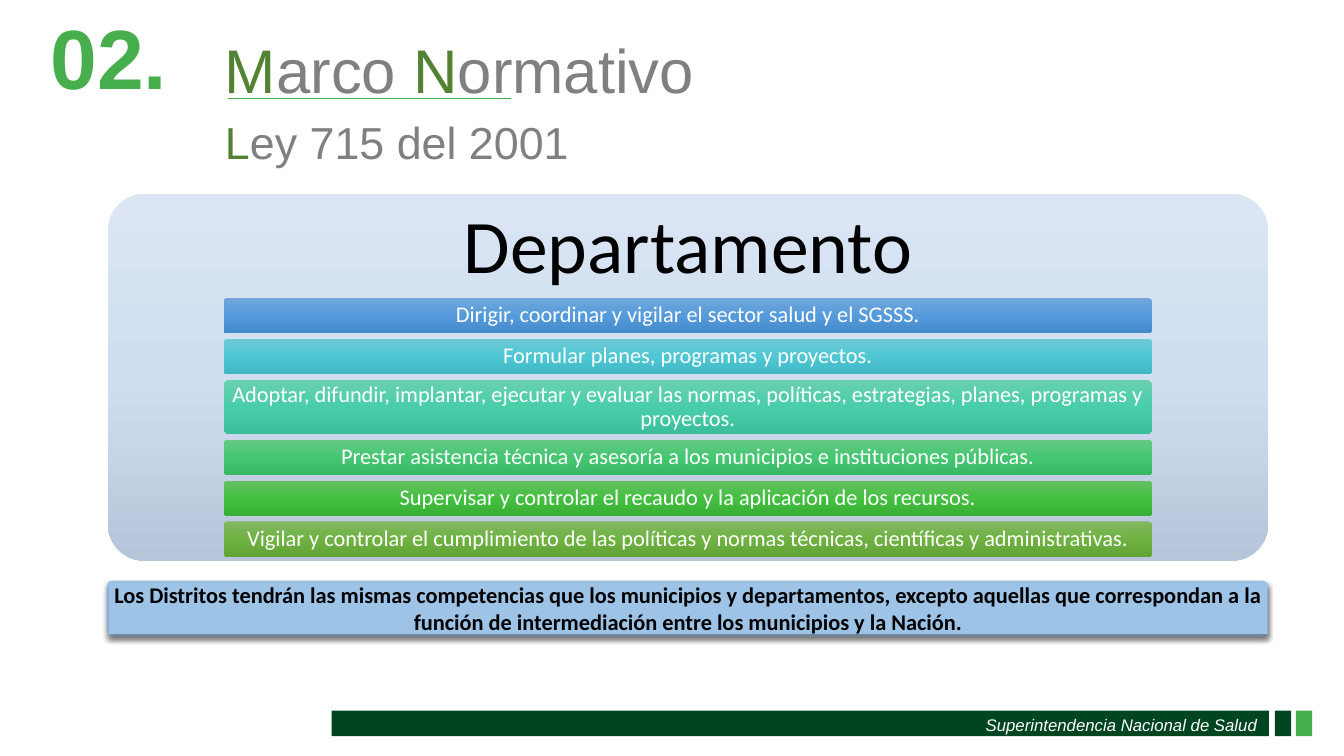
import copy

import pptx
import pptx.dml.color
import pptx.enum.shapes
import pptx.enum.text
import pptx.oxml
import pptx.oxml.ns
import pptx.util

Cm, Pt = pptx.util.Cm, pptx.util.Pt
Kind = pptx.enum.shapes.MSO_SHAPE
Align = pptx.enum.text.PP_ALIGN
Anchor = pptx.enum.text.MSO_ANCHOR
qn = pptx.oxml.ns.qn

HUES = {
    "dark": "004521", "green": "46AE4C", "leaf": "548235", "grey": "808080",
    "white": "FFFFFF", "black": "000000", "sky": "9DC3E6",
}
PANEL = ("DBE5F3", "D0DEF1", "B6C5D9")
DUTIES = [
    ("Dirigir, coordinar y vigilar el sector salud y el SGSSS.",
     0.89, ("71A6DB", "559BDB", "448ACA")),
    ("Formular planes, programas y proyectos.",
     0.89, ("6DCAD5", "4FC7D5", "3FB7C4")),
    ("Adoptar, difundir, implantar, ejecutar y evaluar las normas, políticas, "
     "estrategias, planes, programas y proyectos.",
     1.37, ("69CFB1", "4ACEAA", "3BBE9A")),
    ("Prestar asistencia técnica y asesoría a los municipios e instituciones públicas.",
     0.89, ("66C885", "45C772", "37B764")),
    ("Supervisar y controlar el recaudo y la aplicación de los recursos.",
     0.89, ("64C162", "44BF41", "37B034")),
    ("Vigilar y controlar el cumplimiento de las políticas y normas técnicas, "
     "científicas y administrativas.",
     0.89, ("81B861", "6FB242", "62A336")),
]
NOTE = ("Los Distritos tendrán las mismas competencias que los municipios y "
        "departamentos, excepto aquellas que correspondan a la función de "
        "intermediación entre los municipios y la Nación.")


def rgb(hue):
    return pptx.dml.color.RGBColor.from_string(HUES.get(hue, hue))


class Deck:
    """Holds the style and the current slide."""
    head, body = "Arial", "Calibri"

    def __init__(self):
        self.file = pptx.Presentation()
        self.file.slide_width, self.file.slide_height = Cm(33.87), Cm(19.05)
        self.slide = self.file.slides.add_slide(self.file.slide_layouts[6])

    def shape(self, box, fill, kind=Kind.RECTANGLE):
        """Draw a shape; a tuple of three colours gives a downward gradient."""
        item = self.slide.shapes.add_shape(kind, *map(Cm, box))
        item.shadow.inherit = False
        item.line.fill.background()
        if kind == Kind.ROUNDED_RECTANGLE:
            item.adjustments[0] = 0.1
        if isinstance(fill, tuple):
            self.blend(item, fill)
        else:
            item.fill.solid()
            item.fill.fore_color.rgb = rgb(fill)
        return item

    def blend(self, item, hues):
        item.fill.gradient()
        item.fill.gradient_angle = 270
        stops = item._element.spPr.find(".//" + qn("a:gsLst"))
        stops.append(copy.deepcopy(stops[0]))
        for stop, hue, place in zip(item.fill.gradient_stops, hues, (0, 0.5, 1)):
            stop.color.rgb = rgb(hue)
            stop.position = place

    def shade(self, item):
        """Add a soft shadow below the shape."""
        item._element.spPr.find(qn("a:effectLst")).append(pptx.oxml.parse_xml(
            '<a:outerShdw xmlns:a="http://schemas.openxmlformats.org/drawingml/2006/main"'
            ' blurRad="44450" dist="27940" dir="5400000" algn="ctr" rotWithShape="0">'
            '<a:srgbClr val="000000"><a:alpha val="32000"/></a:srgbClr></a:outerShdw>'))

    def box(self, area):
        return self.slide.shapes.add_textbox(*map(Cm, area))

    def frame(self, item, pad=(0.1, 0.08), anchor=Anchor.MIDDLE, wrap=True):
        frame = item.text_frame
        frame.word_wrap, frame.vertical_anchor = wrap, anchor
        frame.margin_left = frame.margin_right = Cm(pad[0])
        frame.margin_top = frame.margin_bottom = Cm(pad[1])
        return frame

    def text(self, para, runs, size, face, align=Align.LEFT, gap=1.0,
             bold=False, slant=False):
        """Fill a paragraph with (text, colour) runs."""
        para.alignment, para.line_spacing = align, gap
        font = para.font
        font.name, font.size, font.bold, font.italic = face, Pt(size), bold, slant
        if len(runs) == 1:
            font.color.rgb = rgb(runs[0][1])
        for words, hue in runs:
            run = para.add_run()
            run.text = words
            if len(runs) > 1:
                run.font.color.rgb = rgb(hue)

    def line(self, left, right, top, hue, width):
        item = self.slide.shapes.add_connector(
            pptx.enum.shapes.MSO_CONNECTOR.STRAIGHT, Cm(left), Cm(top), Cm(right), Cm(top))
        item.line.color.rgb, item.line.width = rgb(hue), Pt(width)
        item._element.spPr.append(pptx.oxml.parse_xml(
            '<a:effectLst xmlns:a="http://schemas.openxmlformats.org/drawingml/2006/main"/>'))


def footer(deck):
    for left, width, hue in ((8.36, 23.62, "dark"), (32.13, 0.41, "dark"),
                             (32.66, 0.41, "green")):
        deck.shape((left, 17.91, width, 0.64), hue)
    name = deck.frame(deck.box((24.59, 17.88, 7.39, 0.76)), (0.25, 0.13),
                      Anchor.TOP, wrap=False)
    deck.text(name.paragraphs[0], [("Superintendencia Nacional de Salud", "white")],
              12, deck.head, slant=True)


def title(deck):
    pad = (0.18, 0.1)
    mark = deck.frame(deck.box((0, 0.69, 4.39, 1.78)), pad)
    deck.text(mark.paragraphs[0], [("02.", "green")], 60, deck.head,
              Align.RIGHT, 0.9, bold=True)
    lines = deck.frame(deck.box((5.49, 1.57, 25.32, 1.63)), pad)
    deck.text(lines.paragraphs[0], [("M", "leaf"), ("arco ", "grey"), ("N", "leaf"),
                                    ("ormativo", "grey")], 44, deck.head, gap=1.15)
    deck.text(lines.add_paragraph(), [("L", "leaf"), ("ey 715 del 2001", "grey")],
              32, deck.head, gap=1.15)
    deck.line(5.74, 12.88, 2.49, "green", 0.5)


def panel(deck):
    left, top, width = 2.72, 4.88, 29.24
    deck.shape((left, top, width, 9.25), PANEL, Kind.ROUNDED_RECTANGLE)
    head = deck.frame(deck.box((left, top, width, 2.77)), (0.58, 0.58))
    deck.text(head.paragraphs[0], [("Departamento", "black")], 54, deck.body,
              Align.CENTER, 0.9)
    top = 7.51
    for duty, tall, hues in DUTIES:
        bar = deck.shape((5.64, top, 23.39, tall), hues, Kind.ROUNDED_RECTANGLE)
        deck.text(deck.frame(bar).paragraphs[0], [(duty, "white")], 16, deck.body,
                  Align.CENTER, 0.9)
        top += tall + 0.14


def banner(deck):
    deck.shade(deck.shape((2.69, 14.63, 29.26, 1.4), "sky", Kind.ROUNDED_RECTANGLE))
    face = deck.shape((2.74, 14.68, 29.21, 1.3), "sky")
    deck.shade(face)
    deck.text(deck.frame(face).paragraphs[0], [(NOTE, "black")], 16, deck.body,
              Align.CENTER, bold=True)


def main():
    deck = Deck()
    for part in (footer, title, panel, banner):
        part(deck)
    deck.file.save("out.pptx")


if __name__ == "__main__":
    main()
